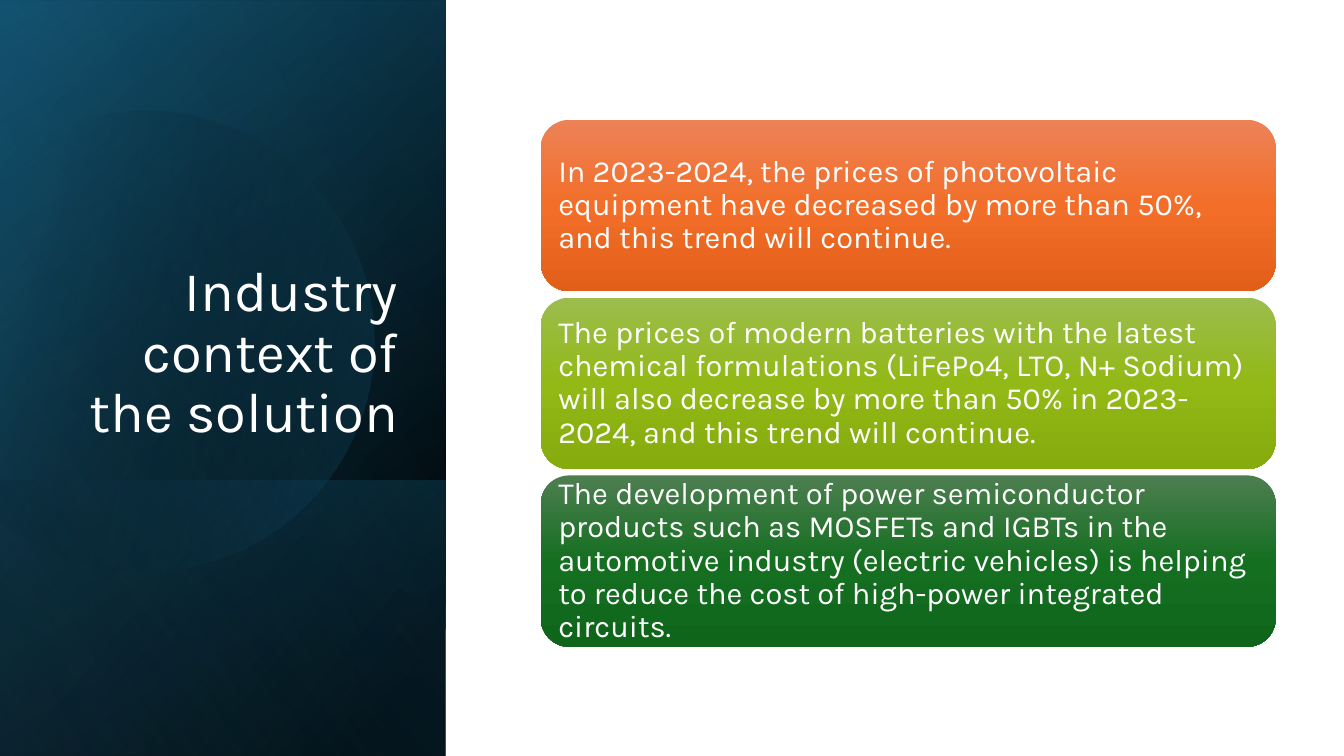
import math
from dataclasses import dataclass

from pptx import Presentation
from pptx import util as u
from pptx.dml.color import RGBColor
from pptx.enum import shapes, text
from pptx.oxml import parse_xml
from pptx.oxml.ns import nsdecls

HUES = {
    "white": "FFFFFF", "black": "000000", "navy": "104862", "teal": "156082", "sky": "46B1E1",
    "peach": "ED8257", "orange": "F26E29", "rust": "E25F1A",
    "pear": "9CBD4E", "lime": "92B916", "moss": "85AB0D",
    "sage": "4D7E50", "green": "156F21", "pine": "0F661B",
}
FONT = "Karla"
Point = tuple[float, float]


@dataclass(frozen=True)
class Stop:
    pos: int
    hue: str
    alpha: int = 100


@dataclass(frozen=True)
class Layer:
    top: float
    height: float
    angle: int
    stops: tuple[Stop, ...]


@dataclass(frozen=True)
class Card:
    words: str
    hues: tuple[str, str, str]


SIDE_W, SLIDE_H = 11.23, 19.05
BACK = (
    Layer(0, SLIDE_H, 50, (Stop(8, "black"), Stop(100, "navy"))),
    Layer(0.02, SLIDE_H, 30, (Stop(0, "black", 0), Stop(99, "teal", 46))),
    Layer(12.1, 6.95, 130, (Stop(2, "teal", 29), Stop(100, "black", 30))),
)
SHEEN = Layer(0, SLIDE_H, 120, (Stop(0, "black", 0), Stop(99, "sky", 11)))

# Disc outline on the slide, in cm: three points make a curve, one a line
DISC_START = (3.78, 2.79)
DISC_PARTS = (
    ((6.25, 2.84), (8.51, 4.5), (9.22, 6.99)),
    ((10.11, 10.08), (8.33, 13.28), (5.26, 14.17)),
    ((3.33, 14.73), (1.35, 14.25), (-0.08, 13.06)),
    ((-0.38, 12.78),),
    ((-0.38, 4.45),),
    ((0, 4.09),),
    ((0.58, 3.61), (1.27, 3.25), (2.03, 3.02)),
    ((2.62, 2.87), (3.2, 2.79), (3.78, 2.79)),
)
DISC_X, DISC_Y, DISC_W, DISC_H = -1.4, 2.69, 10.85, 11.61
DISC_TURN = -16.1

CARDS = (
    Card("In 2023-2024, the prices of photovoltaic equipment have decreased by more than 50%, "
         "and this trend will continue.", ("peach", "orange", "rust")),
    Card("The prices of modern batteries with the latest chemical formulations (LiFePo4, LTO, "
         "N+ Sodium) will also decrease by more than 50% in 2023-2024, and this trend will "
         "continue.", ("pear", "lime", "moss")),
    Card("The development of power semiconductor products such as MOSFETs and IGBTs in the "
         "automotive industry (electric vehicles) is helping to reduce the cost of high-power "
         "integrated circuits.", ("sage", "green", "pine")),
)
CARD_X, CARD_Y, CARD_W, CARD_H, CARD_STEP = 13.63, 3.02, 18.52, 4.32, 4.48
CARD_PAD = 0.21


def shade(shape, stops: tuple[Stop, ...], angle: float) -> None:
    """Give a shape a linear gradient and no outline or shadow."""
    shape.shadow.inherit = False
    shape.line.fill.background()
    shape.fill.background()
    marks = "".join(
        f'<a:gs pos="{s.pos * 1000}"><a:srgbClr val="{HUES[s.hue]}">'
        f'<a:alpha val="{s.alpha * 1000}"/></a:srgbClr></a:gs>' for s in stops)
    grad = parse_xml(
        f'<a:gradFill {nsdecls("a")} rotWithShape="1"><a:gsLst>{marks}</a:gsLst>'
        f'<a:lin ang="{round(angle * 60000)}" scaled="0"/></a:gradFill>')
    props = shape.element.spPr
    props.replace(props.find("{*}noFill"), grad)


def write(slide, words: str, *, left: float, top: float, width: float, height: float,
          size: float, align, anchor, inset: Point = (0.25, 0.13)) -> None:
    box = slide.shapes.add_textbox(u.Cm(left), u.Cm(top), u.Cm(width), u.Cm(height))
    frame = box.text_frame
    frame.word_wrap = True
    frame.vertical_anchor = anchor
    frame.margin_left = frame.margin_right = u.Cm(inset[0])
    frame.margin_top = frame.margin_bottom = u.Cm(inset[1])
    para = frame.paragraphs[0]
    para.alignment = align
    para.line_spacing = 0.9
    run = para.add_run()
    run.text = words
    run.font.size = u.Pt(size)
    run.font.name = FONT
    run.font.color.rgb = RGBColor.from_string(HUES["white"])


def add_layer(slide, layer: Layer) -> None:
    """Draw a mirrored rectangle, turned a quarter, over the side panel."""
    wide, high = layer.height, SIDE_W
    left = (SIDE_W - wide) / 2
    top = layer.top + (layer.height - high) / 2
    rect = slide.shapes.add_shape(
        shapes.MSO_SHAPE.RECTANGLE, u.Cm(left), u.Cm(top), u.Cm(wide), u.Cm(high))
    rect.rotation = 90
    rect.element.spPr.find("{*}xfrm").set("flipH", "1")
    shade(rect, layer.stops, layer.angle)


def mark(point: Point) -> str:
    """Give a slide point as a path point of the disc before it is turned."""
    turn = math.radians(-DISC_TURN)
    x = point[0] - DISC_X - DISC_W / 2
    y = point[1] - DISC_Y - DISC_H / 2
    left = u.Cm(DISC_W / 2 + x * math.cos(turn) - y * math.sin(turn))
    top = u.Cm(DISC_H / 2 + x * math.sin(turn) + y * math.cos(turn))
    return f'<a:pt x="{left}" y="{top}"/>'


def add_disc(slide) -> None:
    left, top, wide, high = (u.Cm(n) for n in (DISC_X, DISC_Y, DISC_W, DISC_H))
    pen = slide.shapes.build_freeform(left, top)
    pen.add_line_segments([(left + wide, top), (left + wide, top + high), (left, top + high)])
    disc = pen.convert_to_shape()
    steps = f"<a:moveTo>{mark(DISC_START)}</a:moveTo>"
    for part in DISC_PARTS:
        tag = "cubicBezTo" if len(part) == 3 else "lnTo"
        steps += f"<a:{tag}>{''.join(mark(p) for p in part)}</a:{tag}>"
    paths = disc.element.spPr.find("{*}custGeom/{*}pathLst")
    paths.replace(paths[0], parse_xml(
        f'<a:path {nsdecls("a")} w="{wide}" h="{high}">{steps}<a:close/></a:path>'))
    disc.rotation = DISC_TURN
    shade(disc, (Stop(29, "black", 0), Stop(100, "teal", 43)), 30)


def add_card(slide, card: Card, top: float) -> None:
    box = slide.shapes.add_shape(
        shapes.MSO_SHAPE.ROUNDED_RECTANGLE,
        u.Cm(CARD_X), u.Cm(top), u.Cm(CARD_W), u.Cm(CARD_H))
    shade(box, tuple(Stop(50 * i, hue) for i, hue in enumerate(card.hues)), 90)
    write(slide, card.words, left=CARD_X + CARD_PAD, top=top + CARD_PAD,
          width=CARD_W - 2 * CARD_PAD, height=CARD_H - 2 * CARD_PAD, size=22,
          align=text.PP_ALIGN.LEFT, anchor=text.MSO_ANCHOR.MIDDLE, inset=(0.23, 0.23))


def main() -> None:
    deck = Presentation()
    deck.slide_width, deck.slide_height = u.Cm(33.87), u.Cm(SLIDE_H)
    slide = deck.slides.add_slide(deck.slide_layouts[6])
    for layer in BACK:
        add_layer(slide, layer)
    add_disc(slide)
    add_layer(slide, SHEEN)
    write(slide, "Industry context of the solution", left=1.62, top=4.69, width=8.66,
          height=6.65, size=40, align=text.PP_ALIGN.RIGHT, anchor=text.MSO_ANCHOR.BOTTOM)
    for i, card in enumerate(CARDS):
        add_card(slide, card, CARD_Y + i * CARD_STEP)
    deck.save("out.pptx")


if __name__ == "__main__":
    main()
